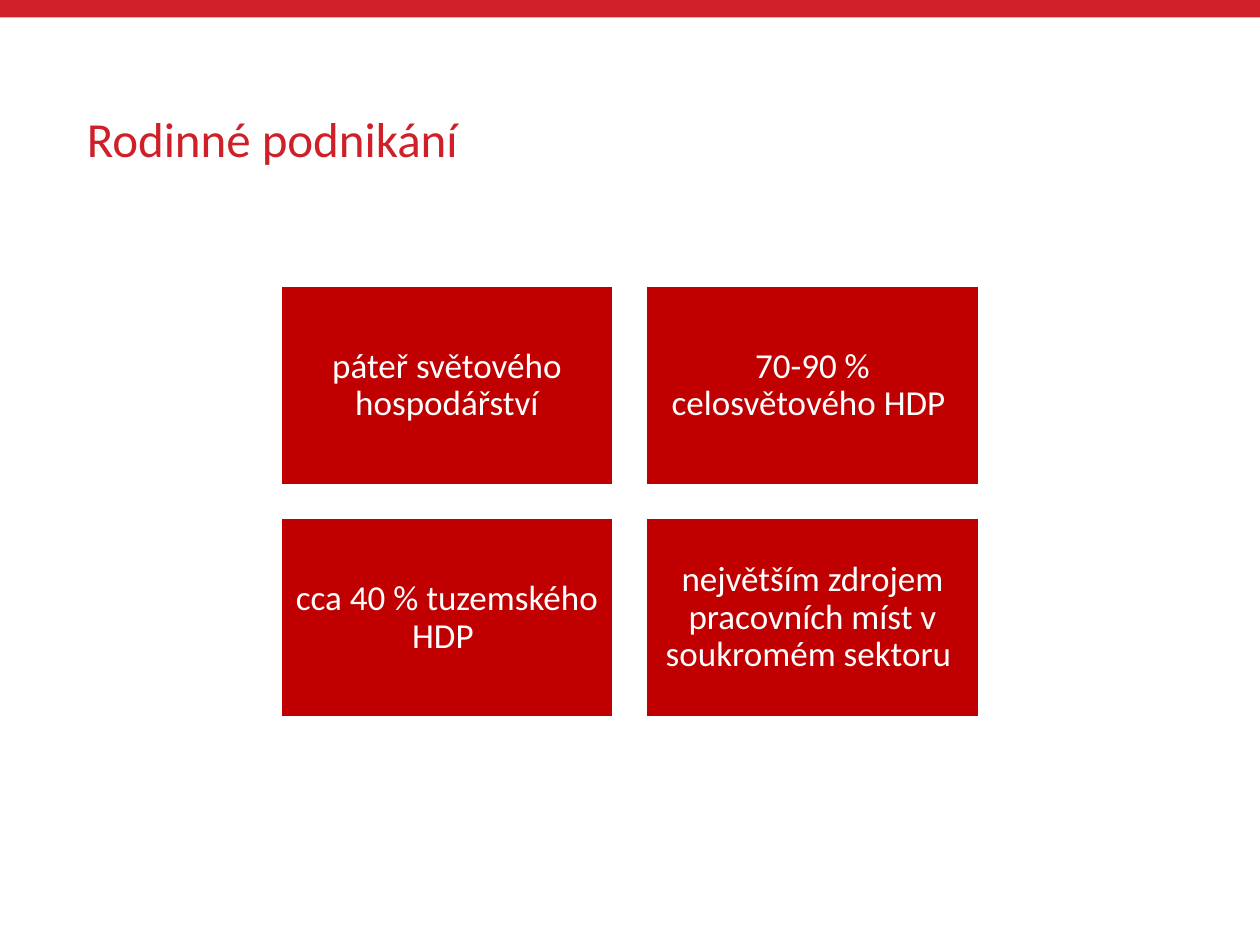
from dataclasses import dataclass

from pptx import Presentation
from pptx.dml.color import RGBColor
from pptx.enum.shapes import MSO_SHAPE
from pptx.enum.text import MSO_ANCHOR, PP_ALIGN
from pptx.shapes.autoshape import Shape
from pptx.slide import Slide
from pptx.util import Cm, Pt


@dataclass(frozen=True)
class Theme:
    font: str = "Calibri"
    accent: RGBColor = RGBColor(0xCF, 0x1F, 0x28)
    card: RGBColor = RGBColor(0xC0, 0x00, 0x00)
    white: RGBColor = RGBColor(0xFF, 0xFF, 0xFF)
    title_size: Pt = Pt(28)
    card_size: Pt = Pt(20)


@dataclass(frozen=True)
class Box:
    """Position and size in centimetres."""
    left: float
    top: float
    width: float
    height: float

    def lengths(self) -> tuple[Cm, Cm, Cm, Cm]:
        return Cm(self.left), Cm(self.top), Cm(self.width), Cm(self.height)


THEME = Theme()
TITLE = "Rodinné podnikání"
FACTS = [
    "páteř světového hospodářství",
    "70-90 % celosvětového HDP ",
    "cca 40 % tuzemského HDP ",
    "největším zdrojem pracovních míst v soukromém sektoru ",
]
COLUMNS = 2
GAP = 0.67
FIRST_CARD = Box(5.66, 5.77, 6.7, 4.01)


def add_rectangle(slide: Slide, box: Box, fill: RGBColor) -> Shape:
    shape = slide.shapes.add_shape(MSO_SHAPE.RECTANGLE, *box.lengths())
    shape.shadow.inherit = False
    shape.fill.solid()
    shape.fill.fore_color.rgb = fill
    shape.line.fill.background()
    return shape


def write_text(shape: Shape, text: str, size: Pt, color: RGBColor, alignment: PP_ALIGN) -> None:
    frame = shape.text_frame
    frame.word_wrap = True
    frame.vertical_anchor = MSO_ANCHOR.MIDDLE
    paragraph = frame.paragraphs[0]
    paragraph.text = text
    paragraph.alignment = alignment
    paragraph.line_spacing = 0.9
    paragraph.font.name = THEME.font
    paragraph.font.size = size
    paragraph.font.color.rgb = color


def add_title(slide: Slide) -> None:
    title = slide.shapes.add_textbox(*Box(1.5, 1.02, 22.4, 3.68).lengths())
    write_text(title, TITLE, THEME.title_size, THEME.accent, PP_ALIGN.LEFT)


def add_card(slide: Slide, box: Box, text: str) -> None:
    card = add_rectangle(slide, box, THEME.card)
    card.line.color.rgb = THEME.white
    card.line.width = Pt(1)
    frame = card.text_frame
    frame.margin_left = frame.margin_right = Cm(0.2)
    frame.margin_top = frame.margin_bottom = Cm(0.2)
    write_text(card, text, THEME.card_size, THEME.white, PP_ALIGN.CENTER)


def main() -> None:
    presentation = Presentation()
    presentation.slide_width = Cm(25.4)
    presentation.slide_height = Cm(19.05)
    slide = presentation.slides.add_slide(presentation.slide_layouts[6])

    add_rectangle(slide, Box(0, 0, 25.4, 0.35), THEME.accent)
    add_title(slide)
    for index, fact in enumerate(FACTS):
        row, column = divmod(index, COLUMNS)
        left = FIRST_CARD.left + column * (FIRST_CARD.width + GAP)
        top = FIRST_CARD.top + row * (FIRST_CARD.height + GAP)
        add_card(slide, Box(left, top, FIRST_CARD.width, FIRST_CARD.height), fact)

    presentation.save("out.pptx")


if __name__ == "__main__":
    main()
